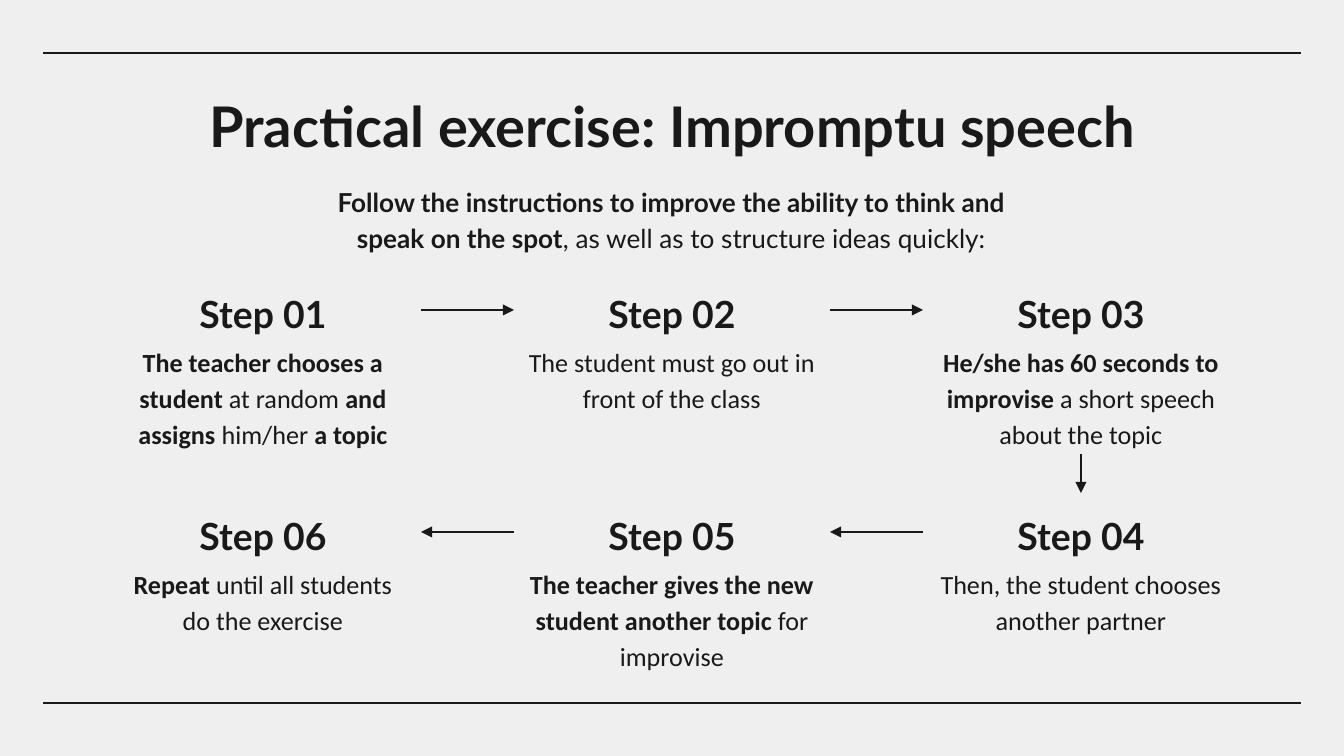
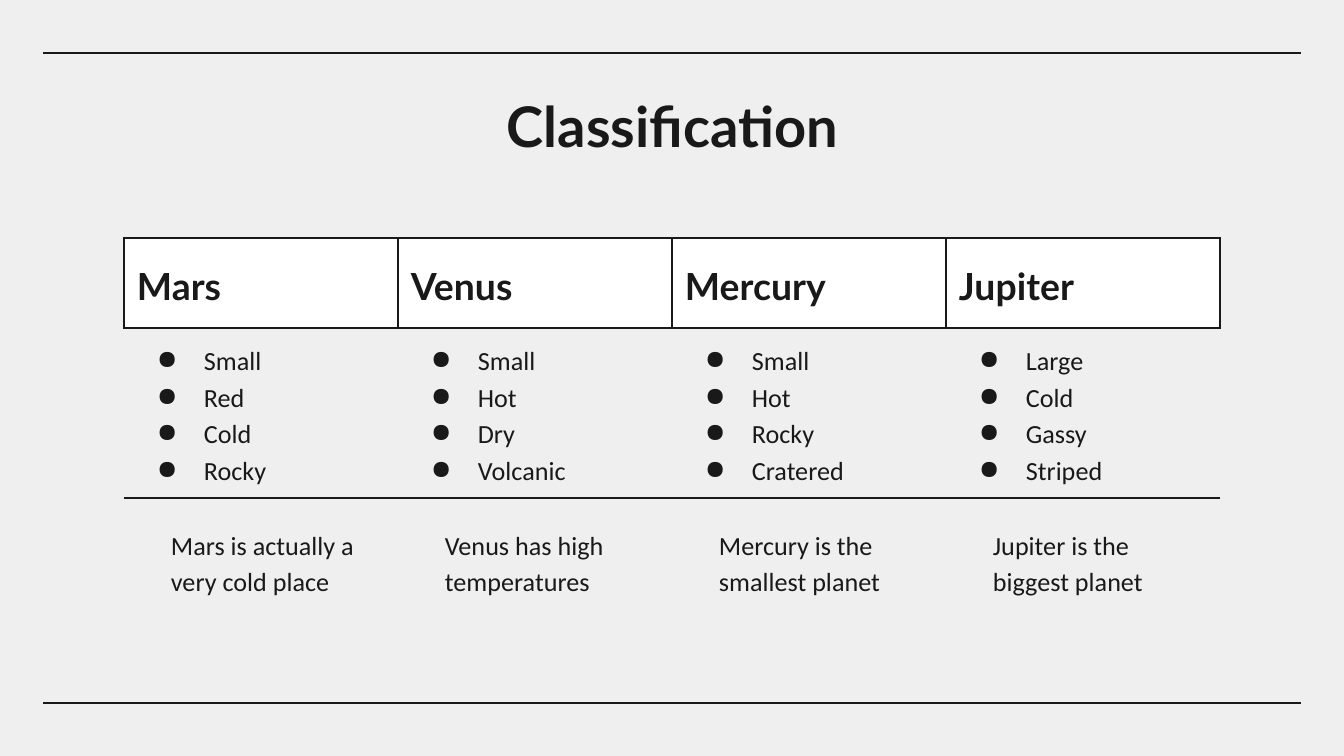
from lxml import etree
from pptx import Presentation
from pptx.dml.color import RGBColor
from pptx.enum import shapes, text
from pptx.oxml import ns
from pptx.util import Emu, Pt

SCALE = 914400 / 134.4
INK, PAPER, WHITE = "191919", "EFEFEF", "FFFFFF"
HEADING = {"font": "Lato", "bold": True}
BODY = {"font": "Calibri", "size": 14}
INSET = 13
LINE_WIDTH = 0.75

STEPS = [
    "*The teacher chooses a student* at random *and assigns* him/her *a topic*",
    "The student must go out in front of the class",
    "*He/she has 60 seconds to improvise* a short speech about the topic",
    "Then, the student chooses another partner",
    "*The teacher gives the new student another topic* for improvise",
    "*Repeat* until all students do the exercise",
]
PLANETS = [
    ("Mars", ["Small", "Red", "Cold", "Rocky"], "Mars is actually a very cold place"),
    ("Venus", ["Small", "Hot", "Dry", "Volcanic"], "Venus has high temperatures"),
    ("Mercury", ["Small", "Hot", "Rocky", "Cratered"], "Mercury is the smallest planet"),
    ("Jupiter", ["Large", "Cold", "Gassy", "Striped"], "Jupiter is the biggest planet"),
]


def px(length):
    return Emu(round(length * SCALE))


def color(value):
    return RGBColor.from_string(value)


def add_xml(parent, tag, **attributes):
    return etree.SubElement(parent, ns.qn(tag), attributes)


def write(frame, content, font="Lato", size=14, bold=False, align=text.PP_ALIGN.LEFT,
          anchor=text.MSO_ANCHOR.TOP, spacing=1.15, left=0, hanging=0, bullet=None):
    frame.word_wrap = True
    frame.vertical_anchor = anchor
    lines = [content] if isinstance(content, str) else content
    for index, line in enumerate(lines):
        paragraph = frame.paragraphs[0] if index == 0 else frame.add_paragraph()
        paragraph.alignment = align
        paragraph.line_spacing = spacing
        properties = paragraph._p.get_or_add_pPr()
        properties.set("marL", str(px(left)))
        properties.set("indent", str(px(-hanging)))
        if bullet:
            add_xml(add_xml(properties, "a:buClr"), "a:srgbClr", val=INK)
            add_xml(properties, "a:buChar", char=bullet)
        for part, words in enumerate(line.split("*")):
            if words:
                run = paragraph.add_run()
                run.text = words
                run.font.name = font
                run.font.size = Pt(size)
                run.font.bold = bold or part % 2 == 1
                run.font.color.rgb = color(INK)


def add_text(slide, box, content, **style):
    frame = slide.shapes.add_textbox(*map(px, box)).text_frame
    frame.margin_left = frame.margin_right = px(INSET)
    frame.margin_top = frame.margin_bottom = px(INSET)
    write(frame, content, align=text.PP_ALIGN.CENTER, **style)


def add_line(slide, start, end, arrow=False):
    line = slide.shapes.add_connector(shapes.MSO_CONNECTOR.STRAIGHT, *map(px, start + end))
    line.line.color.rgb = color(INK)
    line.line.width = Pt(LINE_WIDTH)
    if arrow:
        add_xml(line.line._get_or_add_ln(), "a:tailEnd", type="triangle")
    add_xml(line._element.spPr, "a:effectLst")


def add_page(deck, title):
    slide = deck.slides.add_slide(deck.slide_layouts[6])
    slide.background.fill.solid()
    slide.background.fill.fore_color.rgb = color(PAPER)
    for y in (703, 53):
        add_line(slide, (1301, y), (43, y))
    add_text(slide, (106, 79, 1133, 85), title, size=30, spacing=1.0, **HEADING)
    return slide


def add_step(slide, box, number, instruction):
    left, top, width, height = box
    add_text(slide, (left, top + 58, width, height - 58), instruction, **BODY)
    add_text(slide, (left, top, width, 78), f"Step {number:02}", size=20,
             anchor=text.MSO_ANCHOR.BOTTOM, **HEADING)


def add_step_flow(slide, box):
    left, top, width, height = box
    columns, step_width, step_height = 3, 316, 183
    column_pitch = (width - step_width) / (columns - 1)
    row_pitch = height - step_height
    for index, instruction in enumerate(STEPS):
        row, order = divmod(index, columns)
        column = order if row == 0 else columns - 1 - order
        x, y = left + column * column_pitch, top + row * row_pitch
        add_step(slide, (x, y, step_width, step_height), index + 1, instruction)
        if index == len(STEPS) - 1:
            continue
        if order == columns - 1:
            middle = x + step_width / 2
            add_line(slide, (middle, y + step_height), (middle, y + row_pitch), arrow=True)
        elif row == 0:
            add_line(slide, (x + step_width, y + 39), (x + column_pitch, y + 39), arrow=True)
        else:
            add_line(slide, (x, y + 39), (x - column_pitch + step_width, y + 39), arrow=True)


def set_borders(cell, sides):
    properties = cell._tc.get_or_add_tcPr()
    for position, side in enumerate("LRTB"):
        border = etree.Element(ns.qn(f"a:ln{side}"), w=str(Pt(LINE_WIDTH)))
        if side in sides:
            add_xml(add_xml(border, "a:solidFill"), "a:srgbClr", val=INK)
        else:
            add_xml(border, "a:noFill")
        properties.insert(position, border)


def add_planet_table(slide, box):
    row_formats = [
        (90, "LRTB", dict(size=20, **HEADING)),
        (167, "TB", dict(left=67, hanging=47, bullet="●", **BODY)),
        (128, "T", dict(left=34, **BODY)),
    ]
    table = slide.shapes.add_table(len(row_formats), len(PLANETS), *map(px, box)).table
    table.first_row = table.horz_banding = False
    for column in table.columns:
        column.width = px(box[2] / len(PLANETS))
    for row, (height, sides, style) in enumerate(row_formats):
        table.rows[row].height = px(height)
        for column, planet in enumerate(PLANETS):
            cell = table.cell(row, column)
            cell.margin_left = cell.margin_right = px(INSET)
            cell.margin_top = cell.margin_bottom = px(INSET)
            if row == 0:
                cell.fill.solid()
                cell.fill.fore_color.rgb = color(WHITE)
            else:
                cell.fill.background()
            set_borders(cell, sides)
            write(cell.text_frame, planet[row], **style)
            cell.vertical_anchor = text.MSO_ANCHOR.MIDDLE


def add_exercise_slide(deck):
    slide = add_page(deck, "Practical exercise: Impromptu speech")
    add_text(slide, (302, 169, 739, 95),
             "*Follow the instructions to improve the ability to think and speak on the spot*"
             ", as well as to structure ideas quickly:")
    add_step_flow(slide, (105, 271, 1134, 405))


def add_classification_slide(deck):
    slide = add_page(deck, "Classification")
    add_planet_table(slide, (124, 238, 1096, 385))


def main():
    deck = Presentation()
    deck.slide_width, deck.slide_height = px(1344), px(756)
    add_exercise_slide(deck)
    add_classification_slide(deck)
    deck.save("out.pptx")


if __name__ == "__main__":
    main()
